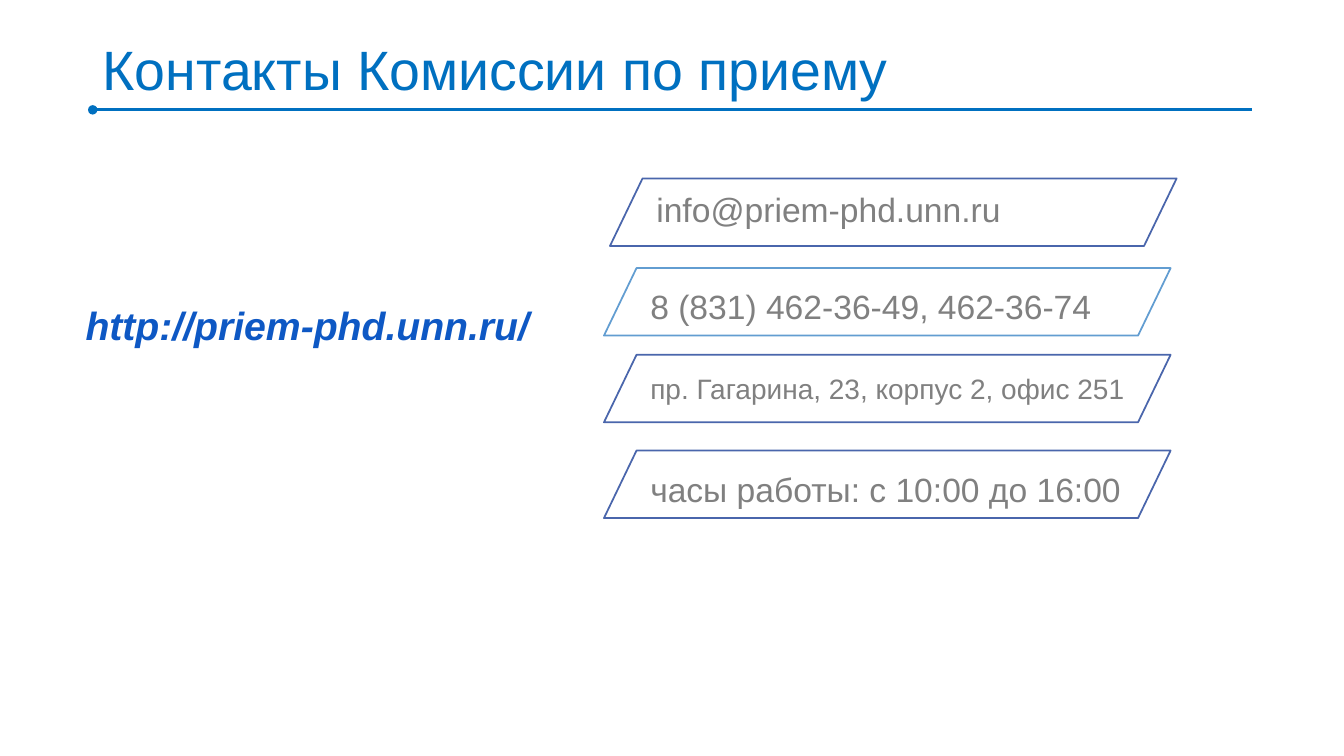
from lxml import etree
from pptx import Presentation
from pptx.dml.color import RGBColor
from pptx.enum.shapes import MSO_CONNECTOR as Connector, MSO_SHAPE as Preset
from pptx.enum.text import MSO_ANCHOR as Anchor
from pptx.oxml.ns import qn
from pptx.util import Inches, Pt


def color(hex_code):
    return RGBColor.from_string(hex_code)


class ContactPage:
    font_name = "Arial"
    accent = "0070C0"
    gray = "808080"
    link_blue = "0E58C4"

    def __init__(self, deck):
        self.shapes = deck.slides.add_slide(deck.slide_layouts[6]).shapes

    def text(self, words, place, size, hue, inset=(0.1, 0.05), spacing=1.0,
             anchor=Anchor.TOP, emphasis=False):
        """Add a one-line text box; place is left, top, width, height in inches."""
        frame = self.shapes.add_textbox(*map(Inches, place)).text_frame
        frame.word_wrap = True
        frame.vertical_anchor = anchor
        frame.margin_left = frame.margin_right = Inches(inset[0])
        frame.margin_top = frame.margin_bottom = Inches(inset[1])
        para = frame.paragraphs[0]
        para.line_spacing = spacing
        span = para.add_run()
        span.text = words
        span.font.name = self.font_name
        span.font.size = Pt(size)
        span.font.color.rgb = color(hue)
        span.font.bold = span.font.italic = emphasis

    def parallelogram(self, place, hue):
        outline = self.shapes.add_shape(Preset.PARALLELOGRAM, *map(Inches, place))
        outline.adjustments[0] = 0.482
        outline.shadow.inherit = False
        outline.fill.background()
        outline.line.color.rgb = color(hue)
        outline.line.width = Pt(1.25)

    def rule(self, left, right, top):
        """Add a horizontal line that starts with a dot."""
        line = self.shapes.add_connector(
            Connector.STRAIGHT, Inches(left), Inches(top), Inches(right), Inches(top))
        line.line.color.rgb = color(self.accent)
        line.line.width = Pt(2.25)
        etree.SubElement(line.line._get_or_add_ln(), qn("a:headEnd"), type="oval")
        etree.SubElement(line._element.spPr, qn("a:effectLst"))


def main():
    deck = Presentation()
    deck.slide_width, deck.slide_height = Inches(13.33), Inches(7.5)
    page = ContactPage(deck)

    page.rule(0.92, 12.42, 1.09)
    page.text("Контакты Комиссии по приему", (0.92, 0.36, 11.5, 0.73), 39.6,
              page.accent, spacing=0.9, anchor=Anchor.MIDDLE)
    page.text("http://priem-phd.unn.ru/", (0.75, 2.94, 4.63, 0.57), 28,
              page.link_blue, emphasis=True)

    # words, size, line spacing, frame left, frame top, text top, text height, outline
    contacts = [
        ("info@priem-phd.unn.ru", 24, 1.0, 6.05, 1.77, 1.8, 0.55, "4A66AC"),
        ("8 (831) 462-36-49, 462-36-74", 24, 1.5, 5.99, 2.66, 2.57, 0.75, "629DD1"),
        ("пр. Гагарина, 23, корпус 2, офис 251", 20, 1.0, 5.99, 3.52, 3.62, 0.48, "4A66AC"),
        ("часы работы: с 10:00 до 16:00", 24, 1.5, 5.99, 4.47, 4.38, 0.75, "4A66AC"),
    ]
    for words, size, spacing, left, top, text_top, text_height, outline in contacts:
        page.text(words, (left + 0.32, text_top, 5.23, text_height), size, page.gray,
                  inset=(0.14, 0.07), spacing=spacing)
        page.parallelogram((left, top, 5.62, 0.67), outline)

    deck.save("out.pptx")


if __name__ == "__main__":
    main()
